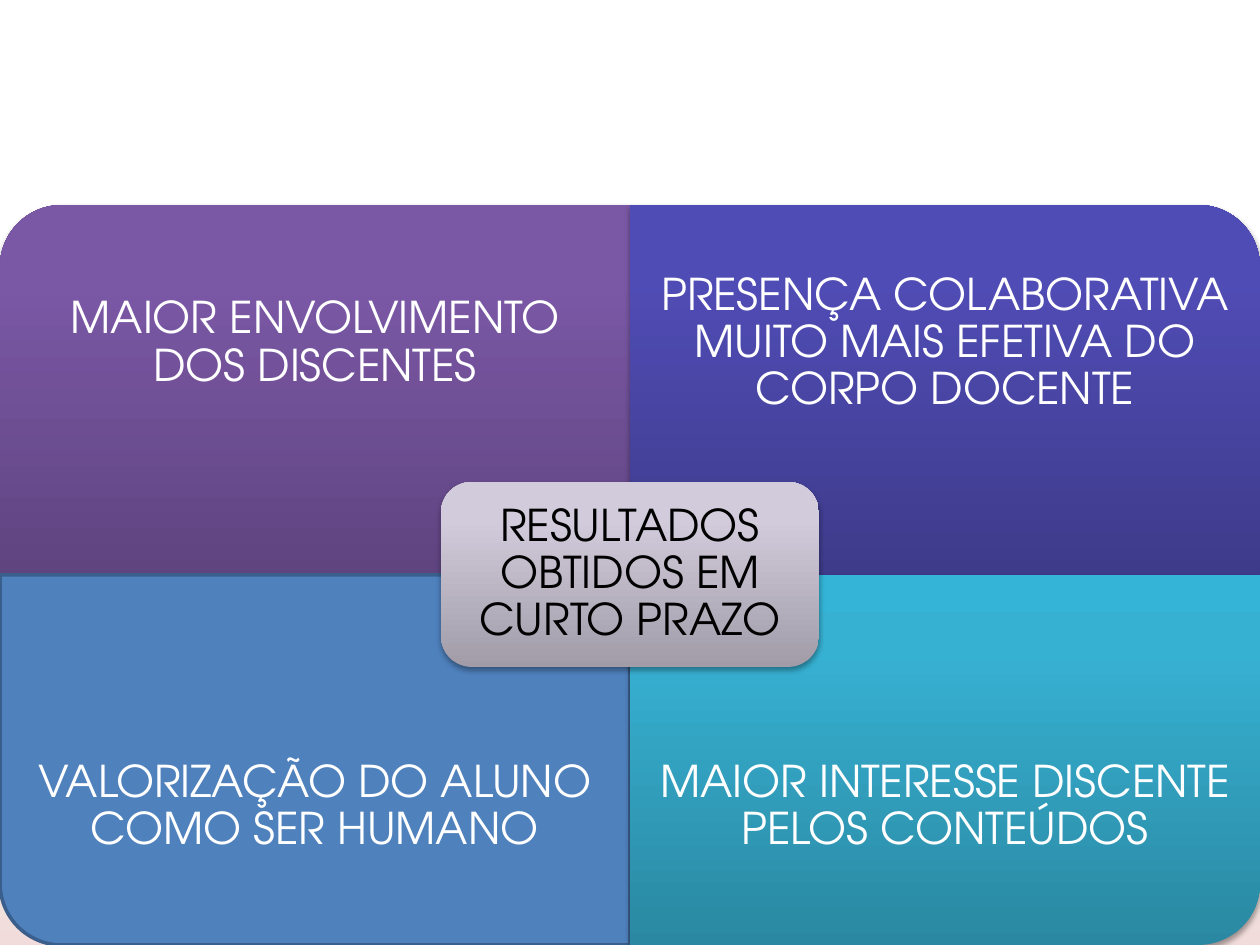
from dataclasses import dataclass

from lxml import etree
from pptx import Presentation
from pptx.dml.color import RGBColor
from pptx.enum.shapes import MSO_SHAPE
from pptx.enum.text import MSO_ANCHOR, PP_ALIGN
from pptx.oxml import parse_xml
from pptx.oxml.ns import nsdecls, qn
from pptx.util import Pt

PX = 914400 // 126
SLIDE_W, SLIDE_H = 1260, 945
ONE_ROUND_CORNER = MSO_SHAPE.ROUND_1_RECTANGLE
ROUNDED = MSO_SHAPE.ROUNDED_RECTANGLE
CENTER = PP_ALIGN.CENTER
MIDDLE = MSO_ANCHOR.MIDDLE
UPWARD, DOWNWARD = 90, 270


@dataclass(frozen=True)
class Theme:
    font: str = "TeX Gyre Adventor"
    size: int = 25
    light: str = "FFFFFF"
    dark: str = "000000"
    shadow: str = "000000"
    outline: str = "3A5F8C"
    background: tuple = ((44, "FFFFFF"), (88, "EEECE1"), (100, "F2DCDB"))
    purple: tuple = ((0, "5F4480"), (80, "7B58A6"), (100, "7C57A8"))
    indigo: tuple = ((0, "3E3B8B"), (80, "504CB5"), (100, "4F4BB8"))
    blue: str = "4F81BD"
    teal: tuple = ((0, "2A88A2"), (80, "37B1D2"), (100, "34B4D6"))
    gray: tuple = ((0, "A19CA8"), (80, "D1CBDB"), (100, "D2CBDC"))


THEME = Theme()


def emu(*lengths):
    return [round(length * PX) for length in lengths]


def fill_gradient(fill, owner, stops, angle):
    """Fill with (percent, colour) stops; the angle ignores shape rotation."""
    fill.gradient()
    fill.gradient_angle = angle
    gradient = owner.xpath(".//a:gradFill")[0]
    gradient.set("rotWithShape", "0")
    stop_list = gradient.find(qn("a:gsLst"))
    for old_stop in list(stop_list):
        stop_list.remove(old_stop)
    for percent, color in stops:
        stop = etree.SubElement(stop_list, qn("a:gs"), pos=str(percent * 1000))
        etree.SubElement(stop, qn("a:srgbClr"), val=color)


def add_shadow(shape):
    shape._element.spPr.append(parse_xml(
        f'<a:effectLst {nsdecls("a")}>'
        '<a:outerShdw blurRad="40000" dist="23000" dir="5400000" rotWithShape="0">'
        f'<a:srgbClr val="{THEME.shadow}"><a:alpha val="35000"/></a:srgbClr>'
        '</a:outerShdw></a:effectLst>'))


def add_panel(slide, kind, box, paint, rotation=0):
    """Add a panel that covers the box after its rotation."""
    left, top, width, height = box
    if rotation % 180:
        shift = (width - height) / 2
        left, top, width, height = left + shift, top - shift, height, width
    panel = slide.shapes.add_shape(kind, *emu(left, top, width, height))
    panel.rotation = rotation
    if isinstance(paint, str):
        panel.fill.solid()
        panel.fill.fore_color.rgb = RGBColor.from_string(paint)
        panel.line.color.rgb = RGBColor.from_string(THEME.outline)
        panel.line.width = Pt(2)
        panel.shadow.inherit = False
    else:
        fill_gradient(panel.fill, panel._element, paint, UPWARD)
        panel.line.fill.background()
        add_shadow(panel)


def add_text(slide, text, box, *, color, inset):
    label = slide.shapes.add_textbox(*emu(*box))
    frame = label.text_frame
    frame.word_wrap = True
    frame.vertical_anchor = MIDDLE
    frame.margin_left, frame.margin_top, frame.margin_right, frame.margin_bottom = emu(*[inset] * 4)
    paragraph = frame.paragraphs[0]
    paragraph.alignment = CENTER
    paragraph.line_spacing = 0.9
    space_after = etree.SubElement(paragraph._p.get_or_add_pPr(), qn("a:spcAft"))
    etree.SubElement(space_after, qn("a:spcPct"), val="35000")
    run = paragraph.add_run()
    run.text = text
    run.font.name = THEME.font
    run.font.size = Pt(THEME.size)
    run.font.color.rgb = RGBColor.from_string(color)


def add_matrix(slide, box, quadrants):
    """Add a two-by-two grid whose text keeps clear of the centre."""
    left, top, width, height = box
    cell_w, cell_h = width // 2, height // 2
    text_h = cell_h * 3 // 4
    for index, (text, paint, rotation) in enumerate(quadrants):
        row, column = divmod(index, 2)
        x, y = left + column * cell_w, top + row * cell_h
        add_panel(slide, ONE_ROUND_CORNER, (x, y, cell_w, cell_h), paint, rotation)
        text_y = y + row * (cell_h - text_h)
        add_text(slide, text, (x, text_y, cell_w, text_h), color=THEME.light, inset=24)


def add_core(slide, box, text):
    left, top, width, height = box
    edge = 9
    add_panel(slide, ROUNDED, box, THEME.gray)
    inner = (left + edge, top + edge, width - 2 * edge, height - 2 * edge)
    add_text(slide, text, inner, color=THEME.dark, inset=12)


def main():
    deck = Presentation()
    deck.slide_width, deck.slide_height = emu(SLIDE_W, SLIDE_H)
    slide = deck.slides.add_slide(deck.slide_layouts[6])
    fill_gradient(slide.background.fill, slide._element, THEME.background, DOWNWARD)
    add_matrix(slide, (0, 205, SLIDE_W, 740), [
        ("MAIOR ENVOLVIMENTO DOS DISCENTES", THEME.purple, 270),
        ("PRESENÇA COLABORATIVA MUITO MAIS EFETIVA DO CORPO DOCENTE", THEME.indigo, 0),
        ("VALORIZAÇÃO DO ALUNO COMO SER HUMANO", THEME.blue, 180),
        ("MAIOR INTERESSE DISCENTE PELOS CONTEÚDOS", THEME.teal, 90),
    ])
    add_core(slide, (441, 482, 378, 185), "RESULTADOS OBTIDOS EM CURTO PRAZO")
    deck.save("out.pptx")


if __name__ == "__main__":
    main()
